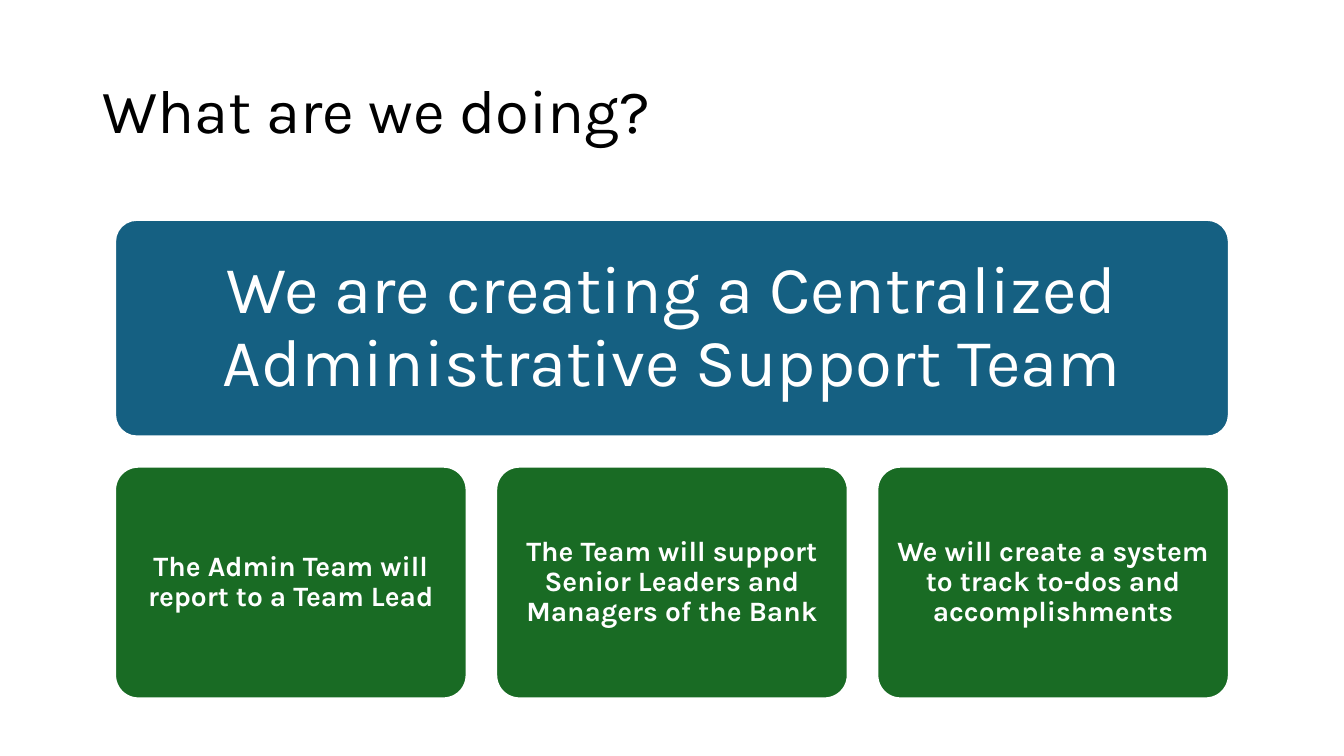
import pptx
import pptx.dml.color
import pptx.enum.shapes
import pptx.enum.text
import pptx.util
from dataclasses import dataclass

Cm = pptx.util.Cm
Pt = pptx.util.Pt
RGBColor = pptx.dml.color.RGBColor
PP_ALIGN = pptx.enum.text.PP_ALIGN


@dataclass(frozen=True)
class Theme:
    font: str = "Karla"
    black: RGBColor = RGBColor(0x00, 0x00, 0x00)
    white: RGBColor = RGBColor(0xFF, 0xFF, 0xFF)
    blue: RGBColor = RGBColor(0x15, 0x60, 0x82)
    green: RGBColor = RGBColor(0x19, 0x6B, 0x24)
    title_size: int = 44
    banner_size: int = 48
    card_size: int = 20


theme = Theme()


def write_text(shape, text, size, color, alignment, bold=False):
    frame = shape.text_frame
    frame.word_wrap = True
    frame.vertical_anchor = pptx.enum.text.MSO_ANCHOR.MIDDLE
    paragraph = frame.paragraphs[0]
    paragraph.alignment = alignment
    paragraph.line_spacing = 0.9
    run = paragraph.add_run()
    run.text = text
    run.font.name = theme.font
    run.font.size = Pt(size)
    run.font.bold = bold
    run.font.color.rgb = color


def add_panel(slide, left, top, width, height, fill, text, size, inset, bold=False):
    shape = slide.shapes.add_shape(
        pptx.enum.shapes.MSO_SHAPE.ROUNDED_RECTANGLE,
        Cm(left), Cm(top), Cm(width), Cm(height))
    shape.adjustments[0] = 0.1
    shape.shadow.inherit = False
    shape.fill.solid()
    shape.fill.fore_color.rgb = fill
    shape.line.color.rgb = theme.white
    shape.line.width = Pt(1.5)
    frame = shape.text_frame
    frame.margin_left = frame.margin_right = Cm(inset)
    frame.margin_top = frame.margin_bottom = Cm(inset)
    write_text(shape, text, size, theme.white, PP_ALIGN.CENTER, bold)


presentation = pptx.Presentation()
presentation.slide_width = Cm(33.87)
presentation.slide_height = Cm(19.05)
slide = presentation.slides.add_slide(presentation.slide_layouts[6])

# Title
title = slide.shapes.add_textbox(Cm(2.33), Cm(1.01), Cm(29.21), Cm(3.68))
write_text(title, "What are we doing?", theme.title_size, theme.black, PP_ALIGN.LEFT)

# Banner across the full content width
content_left, content_width = 2.9, 28.07
add_panel(slide, content_left, 5.54, content_width, 5.46, theme.blue,
          "We are creating a Centralized Administrative Support Team",
          theme.banner_size, inset=0.51)

# Row of cards, spread evenly under the banner
card_texts = [
    "The Admin Team will report to a Team Lead",
    "The Team will support Senior Leaders and Managers of the Bank",
    "We will create a system to track to-dos and accomplishments",
]
card_width = 8.86
card_step = (content_width - card_width) / (len(card_texts) - 1)
for index, card_text in enumerate(card_texts):
    add_panel(slide, content_left + index * card_step, 11.76, card_width, 5.84,
              theme.green, card_text, theme.card_size, inset=0.2, bold=True)

presentation.save("out.pptx")
